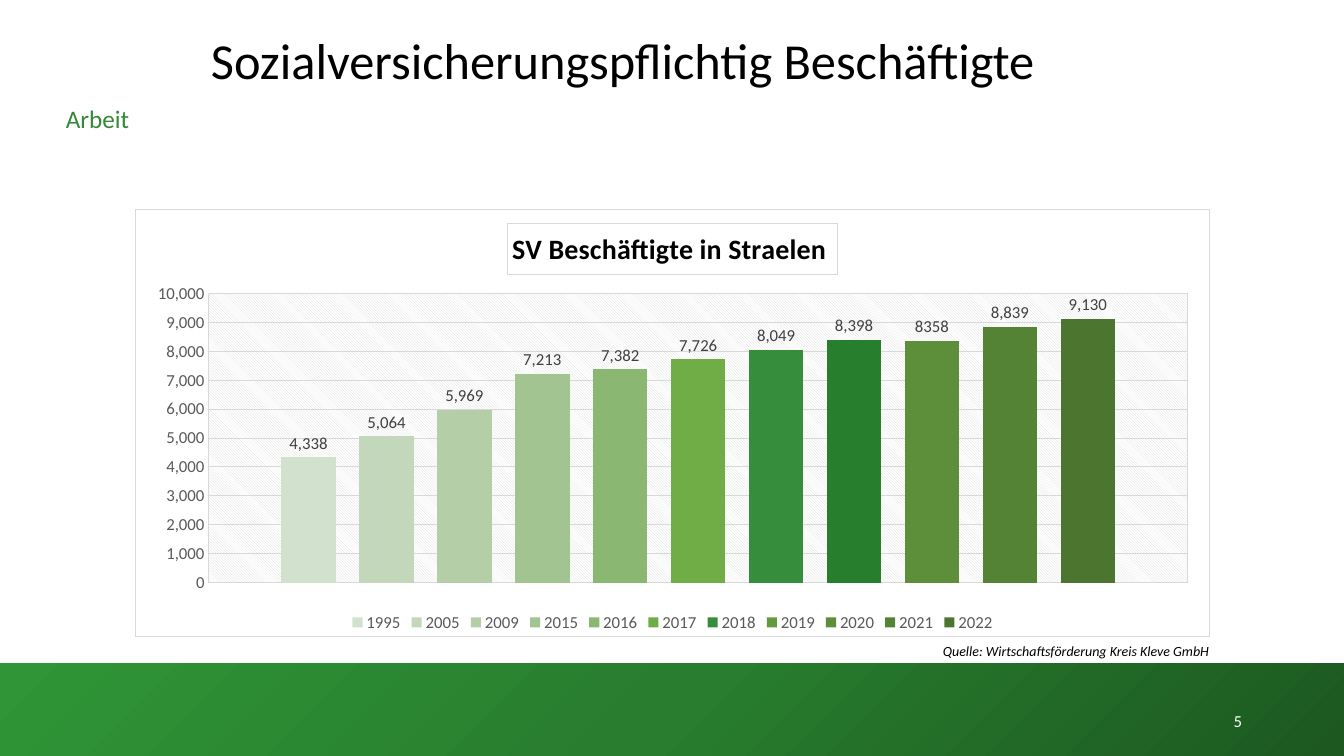
from copy import deepcopy

from pptx import Presentation
from pptx.chart.data import CategoryChartData
from pptx.dml.color import RGBColor
from pptx.enum.chart import XL_CHART_TYPE as CT, XL_LABEL_POSITION as LP
from pptx.enum.chart import XL_LEGEND_POSITION as LEG, XL_TICK_MARK as TM
from pptx.enum.shapes import MSO_SHAPE as SH
from pptx.enum.text import MSO_ANCHOR as MA, PP_ALIGN as AL
from pptx.oxml import parse_xml
from pptx.oxml.ns import nsdecls, qn
from pptx.util import Emu, Pt

PX = 12192000 / 1344
C = {
    "black": "000000", "white": "FFFFFF", "green": "348939",
    "axis": "595959", "label": "404040", "grid": "D9D9D9",
    "dark": "1C5820", "mid": "287D2E", "light": "2F9536",
}
EMPLOYEES = [
    ("1995", 4338, "D2E1CD"), ("2005", 5064, "C3D8BB"),
    ("2009", 5969, "B4CFA8"), ("2015", 7213, "A1C490"),
    ("2016", 7382, "8AB872"), ("2017", 7726, "70AD47"),
    ("2018", 8049, "368E3C"), ("2019", 8398, "639A3F"),
    ("2020", 8358, "5D8F3B"), ("2021", 8839, "558336"),
    ("2022", 9130, "4C7530"),
]


def set_font(font, size, color, bold=False, italic=False):
    font.name, font.size = "Calibri", Pt(size)
    font.bold, font.italic = bold, italic
    font.color.rgb = RGBColor.from_string(C[color])


def add_text(text, box, size, color="black", align=AL.LEFT,
             anchor=MA.TOP, spacing=1.0, italic=False):
    tb = s.shapes.add_textbox(*[Emu(round(v * PX)) for v in box])
    tf = tb.text_frame
    tf.word_wrap = True
    tf.vertical_anchor = anchor
    p = tf.paragraphs[0]
    p.alignment, p.line_spacing = align, spacing
    r = p.add_run()
    r.text = text
    set_font(r.font, size, color, italic=italic)


prs = Presentation()
prs.slide_width, prs.slide_height = Emu(round(1344 * PX)), Emu(round(756 * PX))
s = prs.slides.add_slide(prs.slide_layouts[6])

band = s.shapes.add_shape(
    SH.RECTANGLE, *[Emu(round(v * PX)) for v in (0, 663, 1344, 93)])
band.shadow.inherit = False
band.line.fill.background()
band.fill.gradient()
band.fill.gradient_angle = 135
gs_list = band._element.spPr.find(".//" + qn("a:gsLst"))
gs_list.insert(1, deepcopy(gs_list[0]))
for stop, pos, name in zip(band.fill.gradient_stops, (0, 0.5, 1),
                           ("dark", "mid", "light")):
    stop.position = pos
    stop.color.rgb = RGBColor.from_string(C[name])

add_text("5", (950, 701, 302, 40), 12, "white", AL.RIGHT, MA.MIDDLE)

cd = CategoryChartData(number_format="#,##0")
cd.categories = ["1"]
for year, count, _ in EMPLOYEES:
    cd.add_series(year, [count])
frame = s.shapes.add_chart(
    CT.COLUMN_CLUSTERED,
    *[Emu(round(v * PX)) for v in (135, 209, 1075, 428)], cd)
chart = frame.chart
set_font(chart.font, 10, "black")

chart.has_title = True
title = chart.chart_title
title.include_in_layout = False
p = title.text_frame.paragraphs[0]
r = p.add_run()
r.text = "SV Beschäftigte in Straelen "
set_font(r.font, 20, "black", bold=True)
title.format.line.color.rgb = RGBColor.from_string(C["grid"])
title.format.line.width = Pt(0.75)

chart.has_legend = True
chart.legend.position = LEG.BOTTOM
chart.legend.include_in_layout = False
set_font(chart.legend.font, 12, "axis")

cat, val = chart.category_axis, chart.value_axis
cat.visible = False
for axis in (cat, val):
    axis.has_major_gridlines = True
    line = axis.major_gridlines.format.line
    line.color.rgb = RGBColor.from_string(C["grid"])
    line.width = Pt(0.75)
val.minimum_scale, val.maximum_scale, val.major_unit = 0, 10000, 1000
val.major_tick_mark = val.minor_tick_mark = TM.NONE
val.format.line.fill.background()
val.tick_labels.number_format = "#,##0"
val.tick_labels.number_format_is_linked = False
set_font(val.tick_labels.font, 12, "axis")

plot = chart.plots[0]
plot.gap_width, plot.overlap = 267, -43
plot.vary_by_categories = False
for ser, (year, _, color) in zip(plot.series, EMPLOYEES):
    ser.format.fill.solid()
    ser.format.fill.fore_color.rgb = RGBColor.from_string(color)
    dl = ser.data_labels
    dl.show_value = True
    dl.position = LP.OUTSIDE_END
    dl.number_format = "General" if year == "2020" else "#,##0"
    dl.number_format_is_linked = False
    set_font(dl.font, 12, "label")
    if year == "2019":
        fill = ser.points[0].format.fill
        fill.solid()
        fill.fore_color.rgb = RGBColor.from_string("277E2D")

area = chart.element.find(".//" + qn("c:plotArea"))
for old in area.findall(qn("c:layout")):
    area.remove(old)
area.insert(0, parse_xml(
    f'<c:layout {nsdecls("c")}><c:manualLayout><c:layoutTarget val="inner"/>'
    '<c:xMode val="edge"/><c:yMode val="edge"/><c:x val="0.068"/>'
    '<c:y val="0.197"/><c:w val="0.912"/><c:h val="0.677"/>'
    '</c:manualLayout></c:layout>'))
area.append(parse_xml(
    f'<c:spPr {nsdecls("c", "a")}><a:pattFill prst="ltDnDiag">'
    f'<a:fgClr><a:srgbClr val="{C["grid"]}"/></a:fgClr>'
    f'<a:bgClr><a:srgbClr val="{C["white"]}"/></a:bgClr>'
    '</a:pattFill><a:ln><a:noFill/></a:ln></c:spPr>'))
chart.element.find(qn("c:chart")).addnext(parse_xml(
    f'<c:spPr {nsdecls("c", "a")}><a:solidFill>'
    f'<a:srgbClr val="{C["white"]}"/></a:solidFill><a:ln w="9525">'
    f'<a:solidFill><a:srgbClr val="{C["grid"]}"/></a:solidFill>'
    '</a:ln></c:spPr>'))

add_text("Sozialversicherungspflichtig Beschäftigte", (201, 31, 1083, 88), 36,
         spacing=0.9)
add_text("Arbeit", (36, 98, 123, 40), 18, "green", AL.CENTER)
add_text("Quelle: Wirtschaftsförderung Kreis Kleve GmbH", (933, 638, 350, 27),
         10, italic=True)

prs.save("out.pptx")
